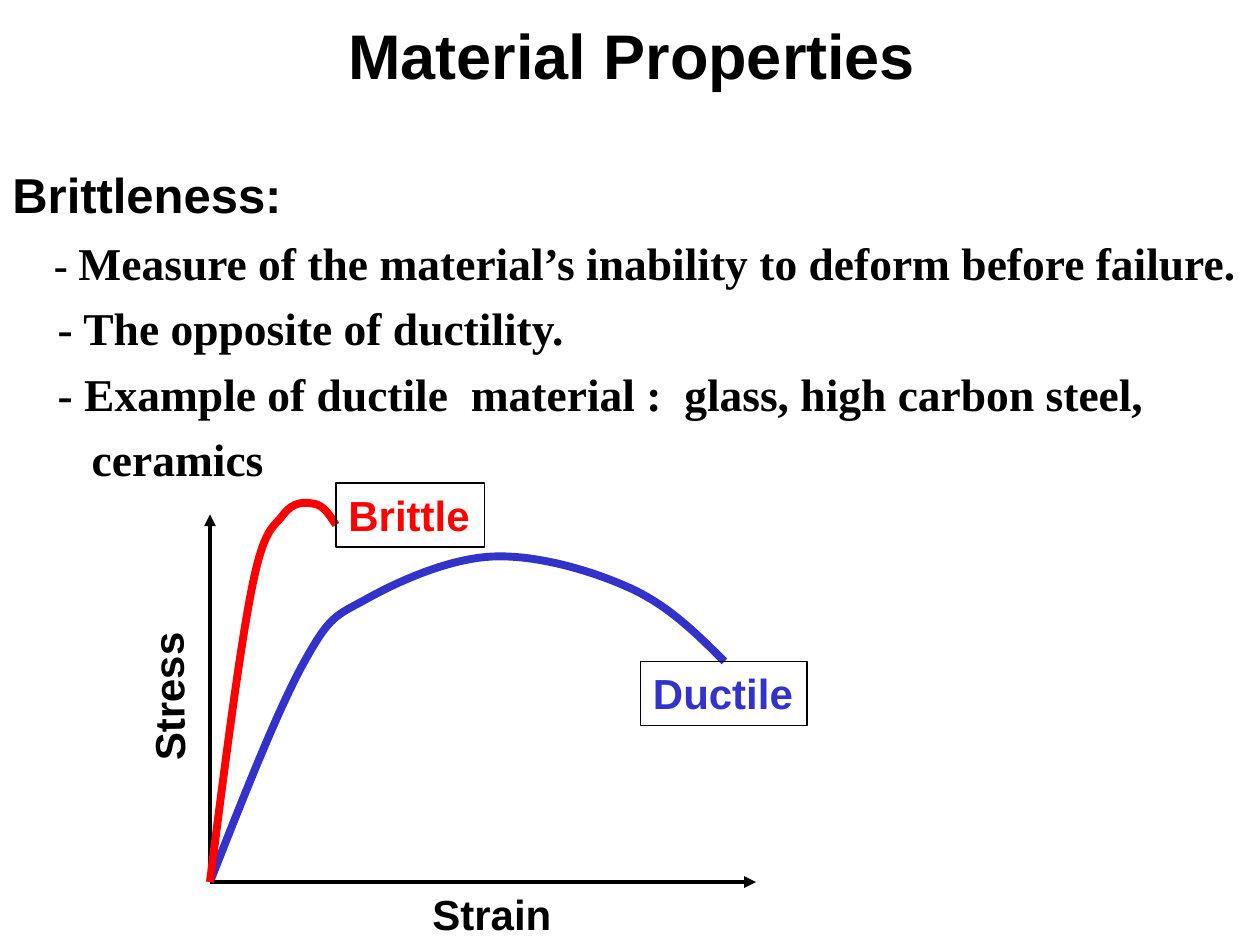
from pptx import Presentation
from pptx.dml.color import RGBColor
from pptx.enum.shapes import MSO_CONNECTOR, MSO_SHAPE
from pptx.enum.text import MSO_ANCHOR, MSO_AUTO_SIZE, PP_ALIGN
from pptx.oxml.ns import qn
from pptx.util import Inches, Pt
from lxml import etree

BLACK = RGBColor(0, 0, 0)
WHITE = RGBColor(255, 255, 255)
RED = RGBColor(255, 0, 0)
BLUE = RGBColor(0x33, 0x33, 0xCC)
STRAIGHT = MSO_CONNECTOR.STRAIGHT
RECTANGLE = MSO_SHAPE.RECTANGLE
LEFT, TOP = PP_ALIGN.LEFT, MSO_ANCHOR.TOP
GROW = MSO_AUTO_SIZE.SHAPE_TO_FIT_TEXT
HEADING_FONT, BODY_FONT = "Arial", "Times New Roman"

COLUMNS, ROWS = 120, 90

ORIGIN = (20, 84)
DUCTILE_KNOTS = [ORIGIN, (29, 63), (35, 57), (47, 53), (60, 56), (69, 63)]
BRITTLE_KNOTS = [ORIGIN, (24, 56), (27, 49), (30, 48), (32, 50)]

# Left indent in inches, then (text, size) runs
BULLETS = [
    (0.33, [("- ", 24), ("Measure of the material’s inability to deform before failure.", 26)]),
    (0.36, [("- The opposite of ductility.", 26)]),
    (0.36, [("- Example of ductile  material :  glass, high carbon steel,", 26)]),
    (0.63, [("ceramics", 26)]),
]


def midpoint(start, end):
    return tuple((a + b) / 2 for a, b in zip(start, end))


def smooth_handles(knots):
    """Return the start, then two handles and an end for each cubic segment."""
    slopes = [tuple((c - a) / 6 for a, c in zip(before, after))
              for before, after in zip(knots, knots[2:])]
    arrivals = [tuple(p - s for p, s in zip(knot, slope))
                for knot, slope in zip(knots[1:], slopes)]
    departures = [tuple(p + s for p, s in zip(knot, slope))
                  for knot, slope in zip(knots[1:], slopes)]
    departures.insert(0, midpoint(knots[0], arrivals[0]))
    arrivals.append(midpoint(knots[-1], departures[-1]))
    points = [knots[0]]
    for segment in zip(departures, arrivals, knots[1:]):
        points.extend(segment)
    return points


class DiagramPage:
    """One slide, laid out on a grid of columns and rows."""

    def __init__(self, deck):
        self.page = deck.slides.add_slide(deck.slide_layouts[6])
        self.shapes = self.page.shapes
        self.cell_width = deck.slide_width / COLUMNS
        self.cell_height = deck.slide_height / ROWS
        self.page.background.fill.solid()
        self.page.background.fill.fore_color.rgb = WHITE

    def place(self, column, row):
        return round(column * self.cell_width), round(row * self.cell_height)

    def bounds(self, area):
        return self.place(*area[:2]) + self.place(*area[2:])

    def add_span(self, para, text, size, color=BLACK, font=HEADING_FONT):
        span = para.add_run()
        span.text = text
        span.font.size = Pt(size)
        span.font.name = font
        span.font.bold = True
        span.font.color.rgb = color

    def label(self, area, text, size=24, color=BLACK, framed=False, rotation=0):
        if framed:
            box = self.shapes.add_shape(RECTANGLE, *self.bounds(area))
            box.shadow.inherit = False
            box.fill.background()
            box.line.color.rgb = BLACK
            box.line.width = Pt(0.75)
        else:
            box = self.shapes.add_textbox(*self.bounds(area))
        box.rotation = rotation
        frame = box.text_frame
        frame.word_wrap = False
        frame.auto_size = GROW
        frame.vertical_anchor = TOP
        para = frame.paragraphs[0]
        para.alignment = LEFT
        self.add_span(para, text, size, color)

    def definition(self, area, heading, bullets):
        frame = self.shapes.add_textbox(*self.bounds(area)).text_frame
        frame.word_wrap = True
        frame.auto_size = GROW
        para = frame.paragraphs[0]
        para.line_spacing = 1.2
        self.add_span(para, heading, 28)
        for indent, spans in bullets:
            para = frame.add_paragraph()
            para.line_spacing = 1.2
            para._p.get_or_add_pPr().set("marL", str(Inches(indent)))
            for text, size in spans:
                self.add_span(para, text, size, font=BODY_FONT)

    def axis(self, end):
        arrow = self.shapes.add_connector(STRAIGHT, *self.place(*ORIGIN), *self.place(*end))
        arrow.line.color.rgb = BLACK
        arrow.line.width = Pt(2.25)
        etree.SubElement(arrow.line._get_or_add_ln(), qn("a:tailEnd"), type="triangle")
        etree.SubElement(arrow._element.spPr, qn("a:effectLst"))

    def curve(self, knots, color):
        """Draw an outline through the handles, then join each three lines into a cubic."""
        points = [self.place(*point) for point in smooth_handles(knots)]
        builder = self.shapes.build_freeform(*points[0])
        builder.add_line_segments(points[1:], close=False)
        outline = builder.convert_to_shape()
        lines = list(outline._element.iter(qn("a:lnTo")))
        for first in range(0, len(lines), 3):
            cubic = etree.Element(qn("a:cubicBezTo"))
            lines[first].addprevious(cubic)
            for line in lines[first:first + 3]:
                cubic.append(line[0])
                line.getparent().remove(line)
        outline.shadow.inherit = False
        outline.fill.background()
        outline.line.color.rgb = color
        outline.line.width = Pt(4.5)


def main():
    deck = Presentation()
    deck.slide_width, deck.slide_height = Inches(10), Inches(7.5)
    page = DiagramPage(deck)
    page.definition((0, 14, 119.3, 32.9), "Brittleness:", BULLETS)
    page.axis((72, 84))
    page.axis((20, 49))
    page.curve(DUCTILE_KNOTS, BLUE)
    page.curve(BRITTLE_KNOTS, RED)
    page.label((61, 63, 15.85, 6.1), "Ductile", color=BLUE, framed=True)
    page.label((32, 46, 14.15, 6.1), "Brittle", color=RED, framed=True)
    page.label((8.65, 63.35, 14.65, 6), "Stress", rotation=269.2)
    page.label((40, 84, 13.8, 6), "Strain")
    page.label((32, 1, 56.4, 8.4), "Material Properties", size=36)
    deck.save("out.pptx")


if __name__ == "__main__":
    main()
